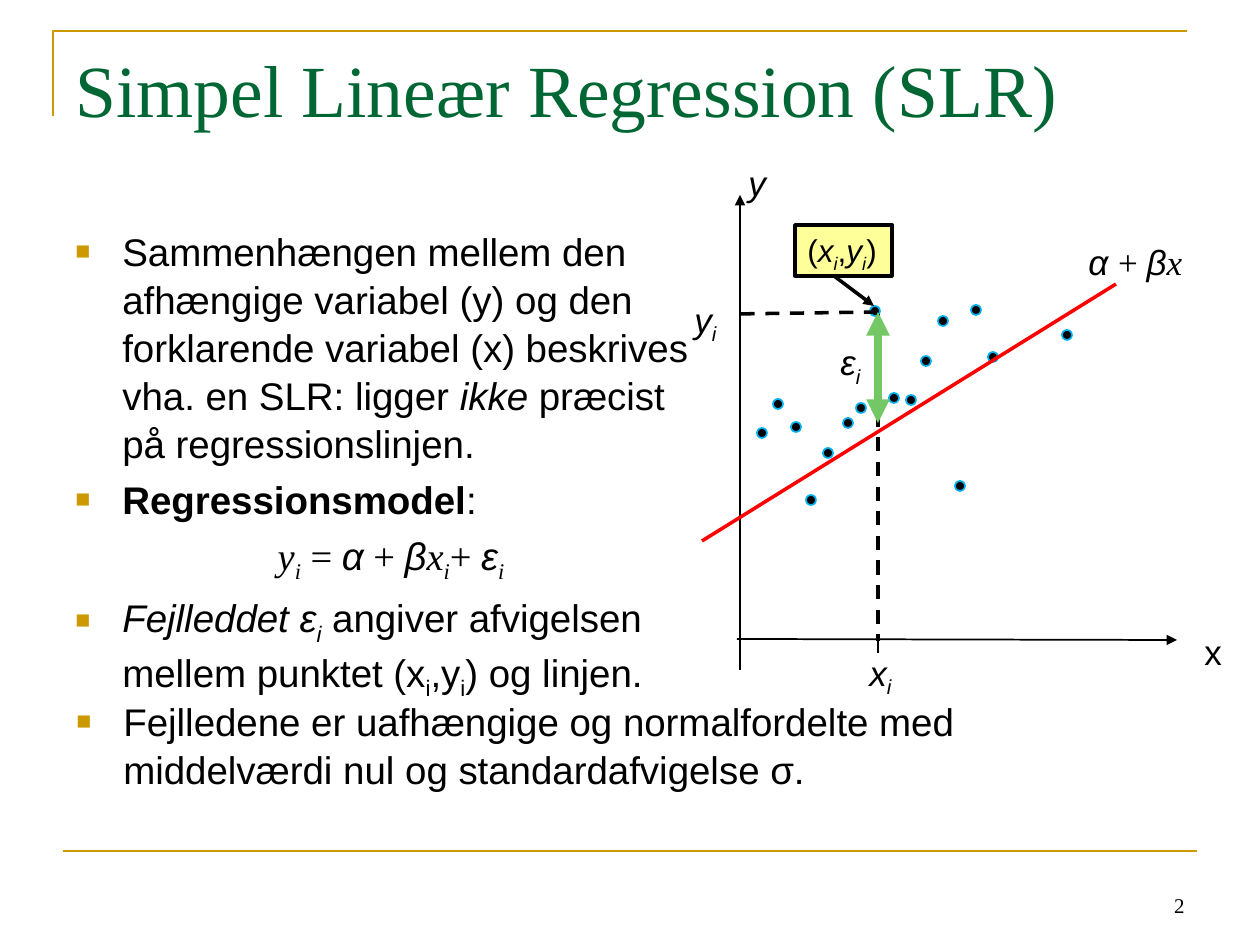
"""Builds a slide on simple linear regression with a scatter diagram."""
import pptx
import pptx.util
import pptx.dml.color
import pptx.oxml
import pptx.oxml.ns
from pptx.enum.dml import MSO_LINE
from pptx.enum.shapes import MSO_CONNECTOR, MSO_SHAPE
from pptx.enum.text import MSO_ANCHOR, MSO_AUTO_SIZE, PP_ALIGN

PX = 914400 / 126
GOLD, GREEN, BLACK = "CC9900", "006633", "000000"
DOT = 10

# Run styles: i italic, b bold, s subscript, t Times New Roman
TITLE = [("Simpel Lineær Regression (SLR)", "t")]
BODY = [
    ("bullet", [("Sammenhængen mellem den afhængige variabel (y) og den forklarende "
                 "variabel (x) beskrives vha. en SLR: ligger ", ""),
                ("ikke", "i"), (" præcist på regressionslinjen.", "")]),
    ("bullet", [("Regressionsmodel", "b"), (":", "")]),
    ("formula", [("y", "it"), ("i", "its"), (" = ", "t"), ("α", "i"), (" + ", "t"),
                 ("β", "i"), ("x", "it"), ("i", "its"), ("+ ", "t"), ("ε", "i"),
                 ("i", "its")]),
    ("bullet", [("Fejlleddet ε", "i"), ("i", "is"),
                (" angiver afvigelsen mellem punktet (x", ""), ("i", "s"), (",y", ""),
                ("i", "s"), (") og linjen.", "")]),
]
ASSUMPTION = [
    ("bullet", [("Fejlledene er uafhængige og normalfordelte med middelværdi nul og "
                 "standardafvigelse σ.", "")]),
]
POINT = [("(", ""), ("x", "i"), ("i", "is"), (",", ""), ("y", "i"), ("i", "is"), (")", "")]
LABELS = [
    ((1192, 624, 43, 54), [("x", "")]),
    ((736, 155, 43, 54), [("y", "i")]),
    ((857, 645, 48, 54), [("x", "i"), ("i", "is")]),
    ((682, 292, 48, 54), [("y", "i"), ("i", "is")]),
    ((828, 334, 45, 54), [("ε", "i"), ("i", "is")]),
    ((1076, 234, 129, 55), [("α ", "i"), ("+ ", "t"), ("β", "i"), ("x", "it")]),
]
DOTS = [(1067, 335), (875, 311), (848, 423), (993, 357), (976, 310), (960, 486),
        (943, 321), (926, 361), (911, 400), (894, 398), (861, 408), (828, 453),
        (811, 500), (796, 427), (778, 404), (762, 433)]
AXES = [(737, 639, 1177, 640), (740, 670, 740, 195)]
REGRESSION = (702, 541, 1116, 284)
GUIDES = [(878, 314, 878, 641), (878, 312, 735, 314)]
TICK = (878, 641, 878, 653)
POINTER = (834, 276, 874, 306)
ERROR = (878, 423, 878, 312)


def px(*values):
    return [round(v * PX) for v in values]


def rgb(color):
    return pptx.dml.color.RGBColor.from_string(color)


def add_xml(parent, tag, **attrs):
    el = pptx.oxml.parse_xml(f"<a:{tag} {pptx.oxml.ns.nsdecls('a')}/>")
    for name, value in attrs.items():
        el.set(name, value)
    parent.append(el)
    return el


def add_runs(p, runs, size, color=BLACK):
    for text, style in runs:
        r = p.add_run()
        r.text = text
        r.font.size = pptx.util.Pt(size)
        r.font.name = "Times New Roman" if "t" in style else "Arial"
        r.font.color.rgb = rgb(color)
        r.font.italic = "i" in style
        r.font.bold = "b" in style
        if "s" in style:
            r.font._element.set("baseline", "-25000")


def add_text(s, box, runs, size, color=BLACK, wrap=True):
    sp = s.shapes.add_textbox(*px(*box))
    tf = sp.text_frame
    tf.word_wrap = wrap
    add_runs(tf.paragraphs[0], runs, size, color)
    return tf


def add_list(s, box, items):
    tf = add_text(s, box, [], 22)
    for n, (kind, runs) in enumerate(items):
        p = tf.add_paragraph() if n else tf.paragraphs[0]
        add_runs(p, runs, 22)
        pPr = p._p.get_or_add_pPr()
        indent = px(47)[0]
        pPr.set("marL", str(indent))
        pPr.set("indent", str(-indent))
        if kind == "bullet":
            add_xml(add_xml(pPr, "buClr"), "srgbClr", val=GOLD)
            add_xml(pPr, "buSzPct", val="65000")
            add_xml(pPr, "buFont", typeface="Arial")
            add_xml(pPr, "buChar", char="■")
        else:
            p.alignment = PP_ALIGN.CENTER
        p.line_spacing = 1.04
        p.space_before = pptx.util.Pt(4.4)


def add_line(s, ends, color, width, dashed=False, arrows=()):
    c = s.shapes.add_connector(MSO_CONNECTOR.STRAIGHT, *px(*ends))
    c.line.color.rgb = rgb(color)
    c.line.width = pptx.util.Pt(width)
    if dashed:
        c.line.dash_style = MSO_LINE.DASH
    for end in arrows:
        add_xml(c.line._get_or_add_ln(), end, type="triangle")
    add_xml(c._element.spPr, "effectLst")


def style_shape(sp, fill, line, width):
    sp.shadow.inherit = False
    if fill:
        sp.fill.solid()
        sp.fill.fore_color.rgb = rgb(fill)
    else:
        sp.fill.background()
    sp.line.color.rgb = rgb(line)
    sp.line.width = pptx.util.Pt(width)


def add_frame(s):
    fb = s.shapes.build_freeform(*px(53, 116))
    fb.add_line_segments([px(53, 31), px(1187, 31)], close=False)
    style_shape(fb.convert_to_shape(), None, GOLD, 1.5)
    add_line(s, (63, 851, 1197, 851), GOLD, 1.5)


def add_diagram(s):
    for axis in AXES:
        add_line(s, axis, BLACK, 1, arrows=["tailEnd"])
    for x, y in DOTS:
        sp = s.shapes.add_shape(MSO_SHAPE.OVAL, *px(x - DOT / 2, y - DOT / 2, DOT, DOT))
        style_shape(sp, BLACK, "00B0F0", 1)
    add_line(s, REGRESSION, "FF0000", 2)
    add_line(s, TICK, BLACK, 1)
    for guide in GUIDES:
        add_line(s, guide, BLACK, 2, dashed=True)
    sp = s.shapes.add_shape(MSO_SHAPE.RECTANGLE, *px(795, 225, 97, 51))
    style_shape(sp, "FFFF99", BLACK, 2)
    tf = sp.text_frame
    tf.word_wrap = False
    tf.vertical_anchor = MSO_ANCHOR.TOP
    tf.paragraphs[0].alignment = PP_ALIGN.LEFT
    add_runs(tf.paragraphs[0], POINT, 18)
    add_line(s, POINTER, BLACK, 2, arrows=["tailEnd"])
    add_line(s, ERROR, "73C764", 4.5, arrows=["headEnd", "tailEnd"])
    for box, runs in LABELS:
        tf = add_text(s, box, runs, 20, wrap=False)
        tf.auto_size = MSO_AUTO_SIZE.SHAPE_TO_FIT_TEXT


def main():
    prs = pptx.Presentation()
    prs.slide_width, prs.slide_height = px(1260, 945)
    s = prs.slides.add_slide(prs.slide_layouts[6])
    add_frame(s)
    add_list(s, (63, 220, 656, 529), BODY)
    add_text(s, (63, 38, 1134, 158), TITLE, 42, GREEN)
    add_diagram(s)
    tf = add_text(s, (903, 861, 294, 63), [("2", "t")], 12)
    tf.vertical_anchor = MSO_ANCHOR.BOTTOM
    tf.paragraphs[0].alignment = PP_ALIGN.RIGHT
    add_list(s, (64, 690, 1082, 169), ASSUMPTION)
    prs.save("out.pptx")


if __name__ == "__main__":
    main()
